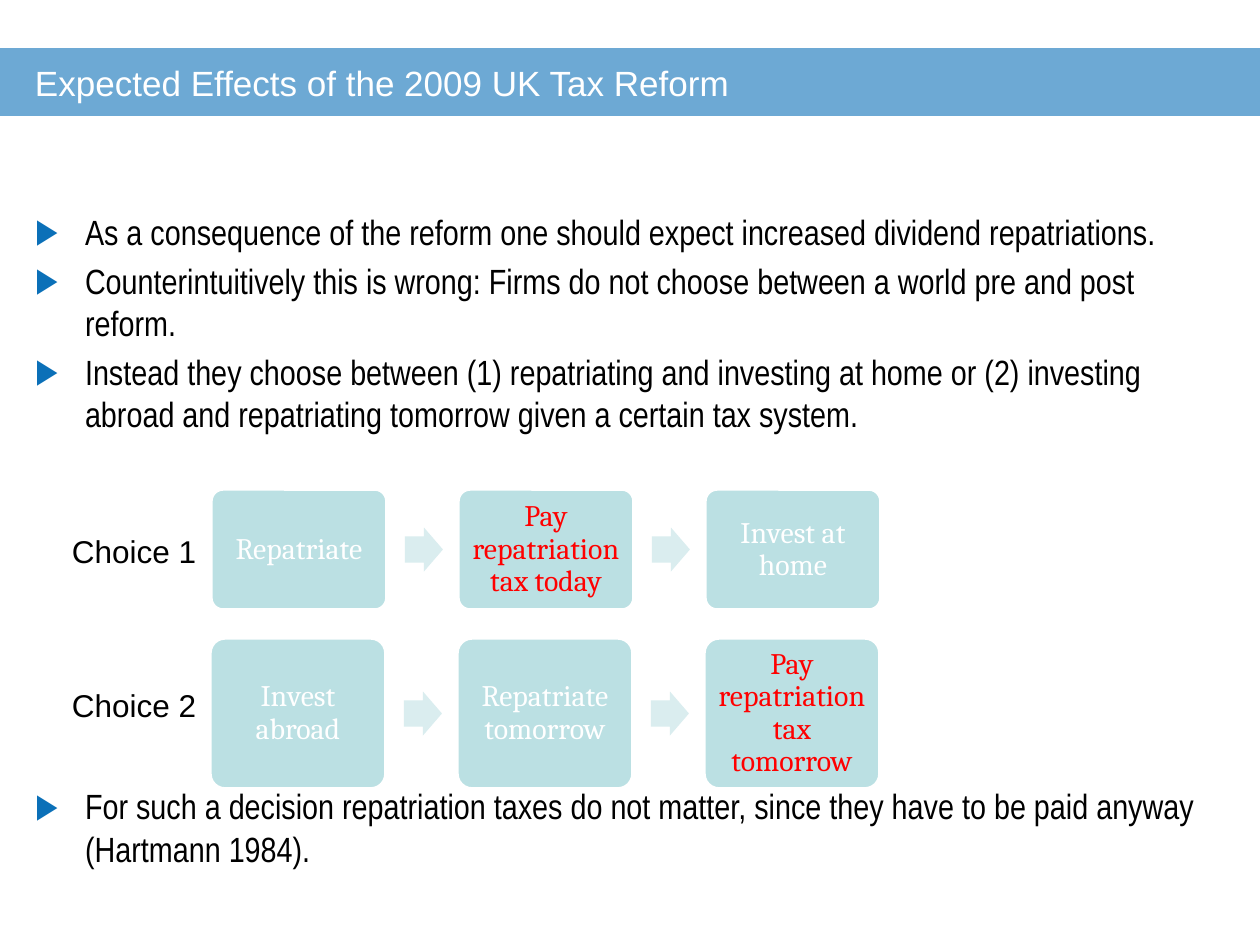
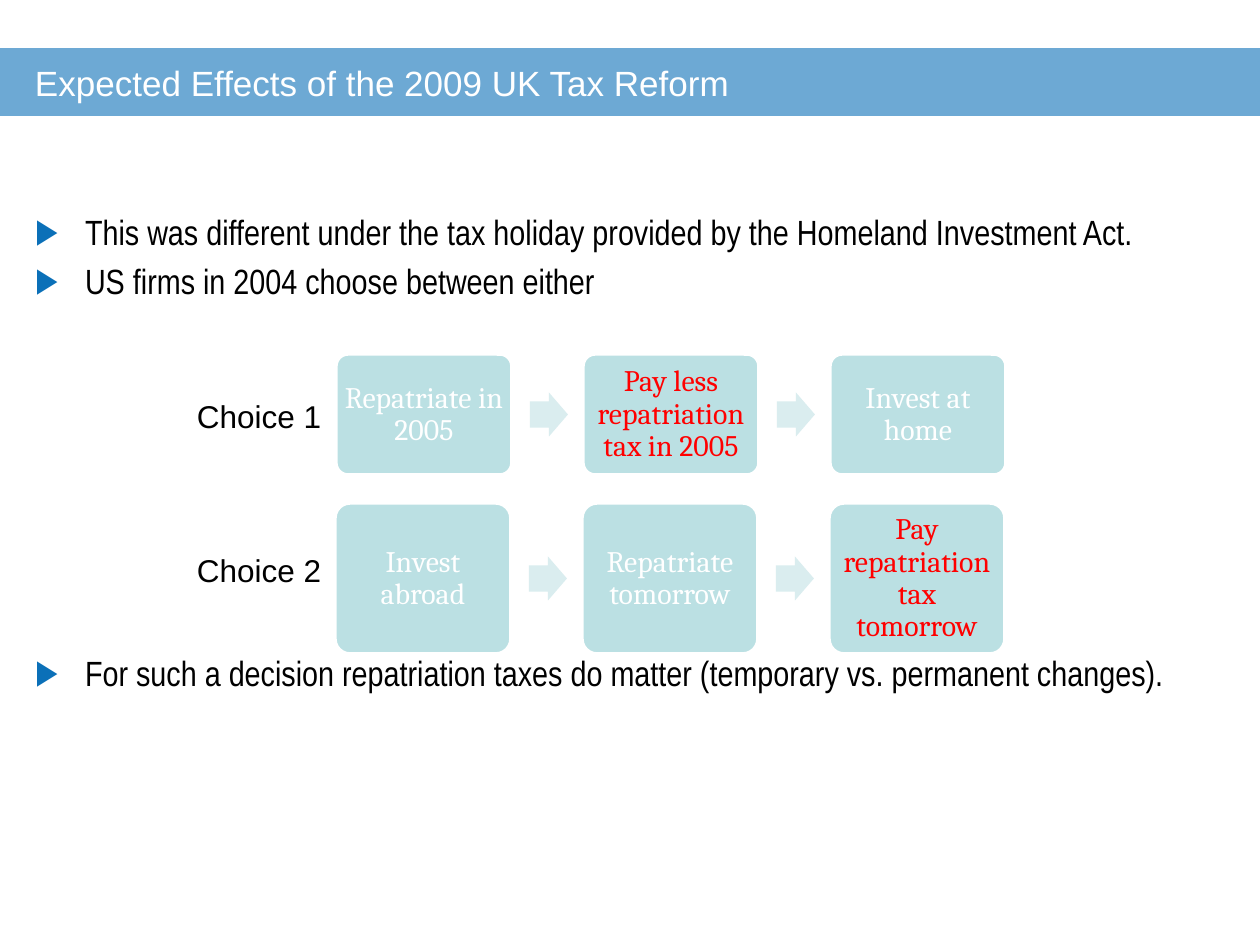
import pptx
import pptx.util
import pptx.dml.color
import pptx.enum.shapes
import pptx.enum.text
import lxml.etree

RGBColor = pptx.dml.color.RGBColor
MSO_SHAPE = pptx.enum.shapes.MSO_SHAPE
PP_ALIGN = pptx.enum.text.PP_ALIGN
MSO_ANCHOR = pptx.enum.text.MSO_ANCHOR

BAND_BLUE = RGBColor(0x6D, 0xA9, 0xD4)
BULLET_BLUE = RGBColor(0x0B, 0x70, 0xB8)
STEP_TEAL = RGBColor(0xBB, 0xE0, 0xE3)
ARROW_TEAL = RGBColor(0xDA, 0xED, 0xEF)
WHITE = RGBColor(0xFF, 0xFF, 0xFF)
BLACK = RGBColor(0x00, 0x00, 0x00)
RED = RGBColor(0xFF, 0x00, 0x00)

# Lengths are in px, 126 to the inch
PX = pptx.util.Inches(1) / 126
SLIDE_W, SLIDE_H = 1260, 945
MARGIN, TEXT_W = 35, 1190
STEP_W, STEP_PITCH = 176, 247
ARROW_OFFSET, ARROW_W, ARROW_H = 194, 38, 44
LABEL_W, LABEL_H = 152, 50

TITLE = "Expected Effects of the 2009 UK Tax Reform"
CHOICE_2 = ["Invest abroad", "Repatriate tomorrow", "Pay repatriation tax tomorrow"]
SLIDES = [
    {
        "points": [
            "As a consequence of the reform one should expect increased dividend repatriations.",
            "Counterintuitively this is wrong: Firms do not choose between a world pre and post reform.",
            "Instead they choose between (1) repatriating and investing at home or (2) investing "
            "abroad and repatriating tomorrow given a certain tax system.",
        ],
        "choice_1": ["Repatriate", "Pay repatriation tax today", "Invest at home"],
        "diagram": (211, 489),
        "conclusion": "For such a decision repatriation taxes do not matter, since they have to be "
                      "paid anyway (Hartmann 1984).",
        "conclusion_top": 785,
    },
    {
        "points": [
            "This was different under the tax holiday provided by the Homeland Investment Act.",
            "US firms in 2004 choose between either",
        ],
        "choice_1": ["Repatriate in 2005", "Pay less repatriation tax in 2005", "Invest at home"],
        "diagram": (336, 354),
        "conclusion": "For such a decision repatriation taxes do matter (temporary vs. permanent changes).",
        "conclusion_top": 652,
    },
]


def add_block(slide, preset, box, fill=None, texts=(), margins=(0, 0, 0, 0),
              font=("Arial", 20, BLACK)):
    """Add a preset shape, or a text box when preset is None, with its text."""
    place = [round(length * PX) for length in box]
    if preset is None:
        block = slide.shapes.add_textbox(*place)
    else:
        block = slide.shapes.add_shape(preset, *place)
        block.shadow.inherit = False
        block.fill.solid()
        block.fill.fore_color.rgb = fill
        block.line.fill.background()
    frame = block.text_frame
    frame.word_wrap = True
    frame.margin_left, frame.margin_top, frame.margin_right, frame.margin_bottom = [
        round(margin * PX) for margin in margins]
    frame.text = "\n".join(texts)
    name, size, color = font
    for run in [run for paragraph in frame.paragraphs for run in paragraph.runs]:
        run.font.name = name
        run.font.size = pptx.util.Pt(size)
        run.font.color.rgb = color
    return block


def add_bullets(slide, top, height, texts):
    """Add a list with blue triangle bullets."""
    points = add_block(slide, None, (MARGIN, top, TEXT_W, height), texts=texts,
                       font=("Arial Narrow", 20, BLACK))
    for index, point in enumerate(points.text_frame.paragraphs):
        properties = point._p.get_or_add_pPr()
        properties.set("marL", str(round(50 * PX)))
        properties.set("indent", str(round(-50 * PX)))
        ns = properties.nsmap["a"]
        color = lxml.etree.SubElement(properties, f"{{{ns}}}buClr")
        lxml.etree.SubElement(color, f"{{{ns}}}srgbClr", val=str(BULLET_BLUE))
        lxml.etree.SubElement(properties, f"{{{ns}}}buFont", typeface="Arial")
        lxml.etree.SubElement(properties, f"{{{ns}}}buChar", char="▶")
        if index:
            point.space_before = pptx.util.Pt(4)


prs = pptx.Presentation()
prs.slide_width = round(SLIDE_W * PX)
prs.slide_height = round(SLIDE_H * PX)

for content in SLIDES:
    slide = prs.slides.add_slide(prs.slide_layouts[6])

    # Title band
    band = add_block(slide, MSO_SHAPE.RECTANGLE, (0, 48, SLIDE_W, 68), BAND_BLUE, [TITLE],
                     (MARGIN, 0, MARGIN, 0), ("Arial", 20, WHITE))
    band.text_frame.vertical_anchor = MSO_ANCHOR.MIDDLE
    band.text_frame.paragraphs[0].alignment = PP_ALIGN.LEFT

    # Arguments above and below the diagram
    add_bullets(slide, 210, 49 * len(content["points"]) + 84, content["points"])
    add_bullets(slide, content["conclusion_top"], 90, [content["conclusion"]])

    # Two choices, each a row of three steps joined by arrows
    left, top = content["diagram"]
    rows = [
        ("Choice 1", content["choice_1"], left, top, 121, 37),
        ("Choice 2", CHOICE_2, left - 1, top + 149, 151, 42),
    ]
    for choice, steps, row_left, row_top, row_height, label_drop in rows:
        for index, step in enumerate(steps):
            step_left = row_left + index * STEP_PITCH
            color = RED if step.startswith("Pay") else WHITE
            box = add_block(slide, MSO_SHAPE.ROUNDED_RECTANGLE,
                            (step_left, row_top, STEP_W, row_height), STEP_TEAL, [step],
                            (5, 5, 5, 5), ("Cambria", 17, color))
            box.adjustments[0] = 0.1
            box.line.color.rgb = WHITE
            box.line.width = pptx.util.Pt(2)
            box.text_frame.vertical_anchor = MSO_ANCHOR.MIDDLE
            box.text_frame.paragraphs[0].alignment = PP_ALIGN.CENTER
            box.text_frame.paragraphs[0].line_spacing = 0.9
            if index < len(steps) - 1:
                arrow = add_block(slide, MSO_SHAPE.RIGHT_ARROW,
                                  (step_left + ARROW_OFFSET, row_top + (row_height - ARROW_H) / 2,
                                   ARROW_W, ARROW_H), ARROW_TEAL)
                arrow.adjustments[0] = 0.6
                arrow.adjustments[1] = 0.5
        label = add_block(slide, None, (left - LABEL_W, row_top + label_drop, LABEL_W, LABEL_H),
                          texts=[choice], margins=(13, 6, 0, 6), font=("Arial", 18, BLACK))
        label.text_frame.word_wrap = False

prs.save("out.pptx")
